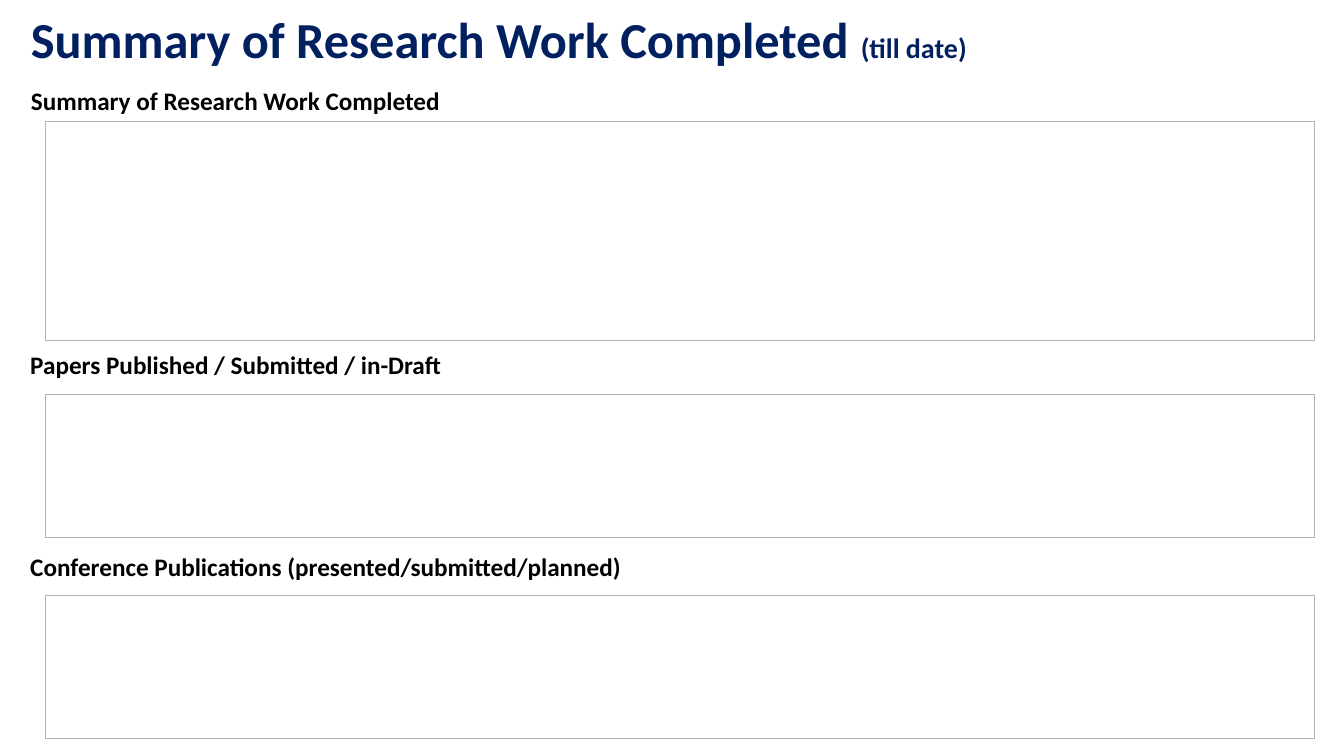
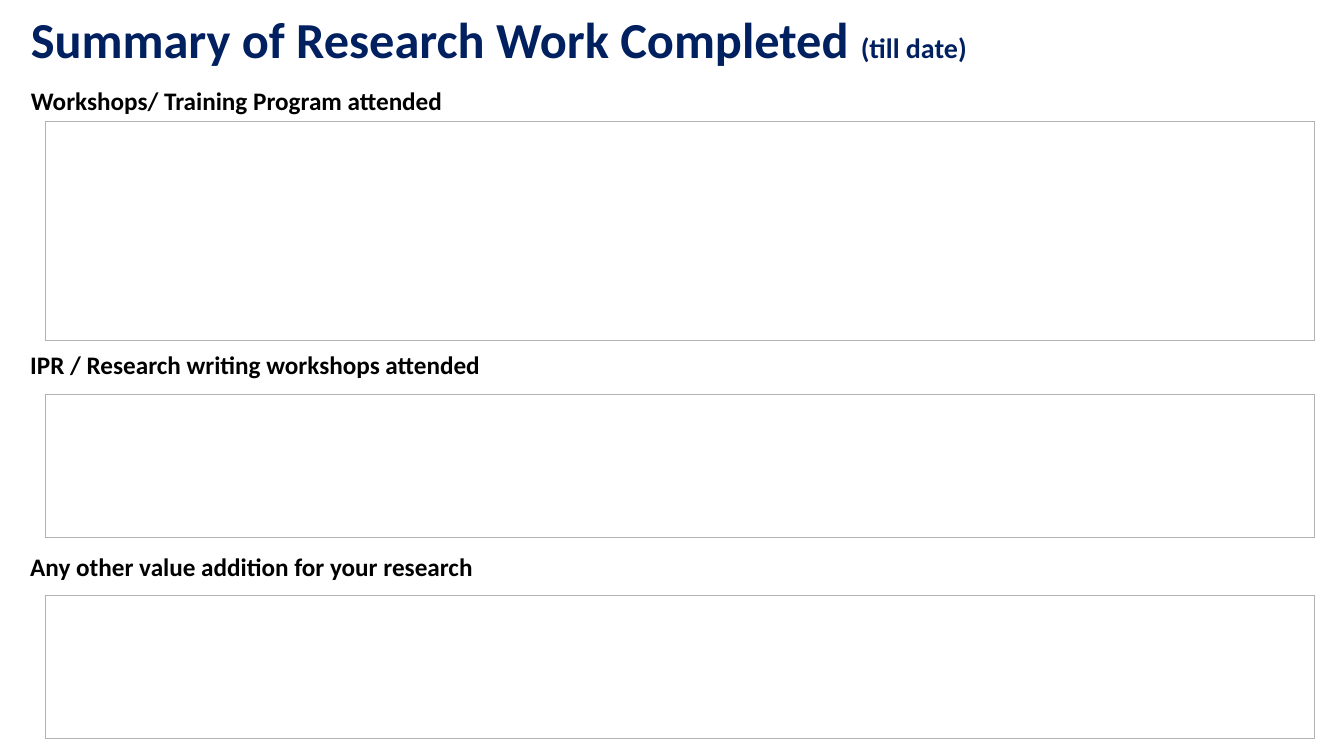
from pptx import Presentation
from pptx.dml.color import RGBColor
from pptx.enum.text import MSO_ANCHOR
from pptx.oxml import parse_xml
from pptx.oxml.ns import nsdecls
from pptx.util import Pt

FONT = "Calibri"
NAVY, BLACK, GREY = "002060", "000000", "B2B2B2"
TITLE = [("Summary of Research Work Completed ", 36), ("(till date)", 20)]
SLIDES = [
    ["Summary of Research Work Completed",
     "Papers Published / Submitted / in-Draft",
     "Conference Publications (presented/submitted/planned)"],
    ["Workshops/ Training Program attended",
     "IPR / Research writing workshops attended",
     "Any other value addition for your research"],
]
SECTIONS = [(15, 57.6, 87.1, 156.2), (14.5, 246.2, 281.5, 102.2), (14.5, 390.2, 425.5, 102.2)]
LABEL_W, LABEL_H = 827, 29
BOX_X, BOX_W = 32.4, 906.5


def color(value):
    return RGBColor.from_string(value)


def add_text(s, x, y, w, h, runs, hue):
    tf = s.shapes.add_textbox(Pt(x), Pt(y), Pt(w), Pt(h)).text_frame
    tf.word_wrap = True
    p = tf.paragraphs[0]
    for text, size in runs:
        r = p.add_run()
        r.text = text
        r.font.name, r.font.size, r.font.bold = FONT, Pt(size), True
        r.font.color.rgb = color(hue)
    return tf


def add_title(s):
    tf = add_text(s, 15, 12.2, 839, 36, TITLE, NAVY)
    tf.vertical_anchor = MSO_ANCHOR.MIDDLE
    tf.paragraphs[0].line_spacing = 0.9


def add_box(s, y, h):
    table = s.shapes.add_table(1, 1, Pt(BOX_X), Pt(y), Pt(BOX_W), Pt(h)).table
    table.first_row = table.horz_banding = False
    cell = table.cell(0, 0)
    pr = cell._tc.get_or_add_tcPr()
    for side in "LRTB":
        pr.append(parse_xml(
            f'<a:ln{side} {nsdecls("a")} w="{Pt(0.75)}"><a:solidFill>'
            f'<a:srgbClr val="{GREY}"/></a:solidFill></a:ln{side}>'))
    cell.fill.background()


def main():
    prs = Presentation()
    prs.slide_width, prs.slide_height = Pt(960), Pt(540)
    for labels in SLIDES:
        s = prs.slides.add_slide(prs.slide_layouts[6])
        add_title(s)
        for label, (x, label_y, box_y, box_h) in zip(labels, SECTIONS):
            add_text(s, x, label_y, LABEL_W, LABEL_H, [(label, 18)], BLACK)
            add_box(s, box_y, box_h)
    prs.save("out.pptx")


if __name__ == "__main__":
    main()
